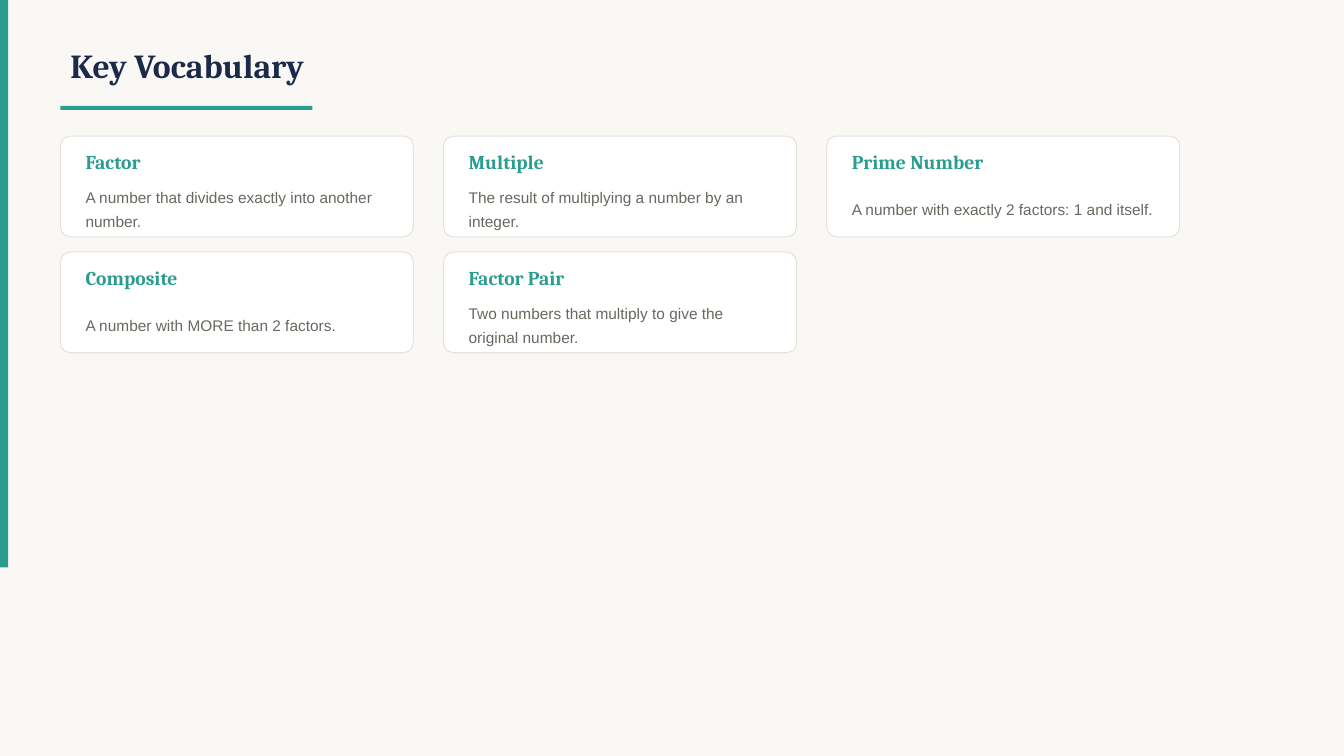
from pptx import Presentation
from pptx.dml.color import RGBColor
from pptx.enum.shapes import MSO_SHAPE
from pptx.enum.text import MSO_ANCHOR
from pptx.util import Emu, Pt

EMU_PER_PX = 9144
SLIDE_WIDTH, SLIDE_HEIGHT = 1333, 750

CREAM = RGBColor(0xFA, 0xF8, 0xF5)
TEAL = RGBColor(0x2A, 0x9D, 0x8F)
NAVY = RGBColor(0x1B, 0x2A, 0x4A)
WHITE = RGBColor(0xFF, 0xFF, 0xFF)
BORDER = RGBColor(0xE5, 0xE2, 0xDC)
GREY = RGBColor(0x6B, 0x66, 0x60)

MARGIN, CARDS_TOP = 60, 135
CARD_WIDTH, CARD_HEIGHT = 350, 100
COLUMN_GAP, ROW_GAP = 30, 15
COLUMNS = 3

VOCABULARY = [
    ("Factor", "A number that divides exactly into another number."),
    ("Multiple", "The result of multiplying a number by an integer."),
    ("Prime Number", "A number with exactly 2 factors: 1 and itself."),
    ("Composite", "A number with MORE than 2 factors."),
    ("Factor Pair", "Two numbers that multiply to give the original number."),
]


def px(*lengths):
    return [Emu(length * EMU_PER_PX) for length in lengths]


class VocabularySlide:
    """Draws vocabulary elements in one style on the current slide."""

    heading_font = "Cambria"
    body_font = "Arial"

    def __init__(self, slide):
        self.slide = slide
        background = slide.background.fill
        background.solid()
        background.fore_color.rgb = CREAM

    def panel(self, left, top, width, height, fill, line=None, radius=None):
        preset = MSO_SHAPE.RECTANGLE if radius is None else MSO_SHAPE.ROUNDED_RECTANGLE
        shape = self.slide.shapes.add_shape(preset, *px(left, top, width, height))
        shape.shadow.inherit = False
        shape.fill.solid()
        shape.fill.fore_color.rgb = fill
        if radius is not None:
            shape.adjustments[0] = radius
        if line is None:
            shape.line.fill.background()
        else:
            shape.line.color.rgb = line
            shape.line.width = Pt(0.75)

    def text(self, text, left, top, width, height, *, size, color, font,
             bold=False, line_spacing=None):
        box = self.slide.shapes.add_textbox(*px(left, top, width, height))
        frame = box.text_frame
        frame.word_wrap = True
        frame.vertical_anchor = MSO_ANCHOR.MIDDLE
        paragraph = frame.paragraphs[0]
        paragraph.line_spacing = line_spacing
        run = paragraph.add_run()
        run.text = text
        run.font.name = font
        run.font.size = Pt(size)
        run.font.bold = bold
        run.font.color.rgb = color

    def title(self, text):
        self.panel(0, 0, 8, 563, TEAL)
        self.text(text, MARGIN, 30, 1000, 70, size=24, color=NAVY,
                  font=self.heading_font, bold=True)
        self.panel(MARGIN, 105, 250, 4, TEAL)

    def card(self, left, top, term, definition):
        self.panel(left, top, CARD_WIDTH, CARD_HEIGHT, WHITE, line=BORDER, radius=0.1)
        text_left, text_width = left + 15, CARD_WIDTH - 30
        self.text(term, text_left, top + 8, text_width, 35, size=14, color=TEAL,
                  font=self.heading_font, bold=True)
        self.text(definition, text_left, top + 45, text_width, 50, size=11, color=GREY,
                  font=self.body_font, line_spacing=1.3)


def main():
    presentation = Presentation()
    presentation.slide_width, presentation.slide_height = px(SLIDE_WIDTH, SLIDE_HEIGHT)
    blank_layout = presentation.slide_layouts[6]
    vocabulary_slide = VocabularySlide(presentation.slides.add_slide(blank_layout))
    vocabulary_slide.title("Key Vocabulary")
    for index, (term, definition) in enumerate(VOCABULARY):
        row, column = divmod(index, COLUMNS)
        left = MARGIN + column * (CARD_WIDTH + COLUMN_GAP)
        top = CARDS_TOP + row * (CARD_HEIGHT + ROW_GAP)
        vocabulary_slide.card(left, top, term, definition)
    presentation.save("out.pptx")


if __name__ == "__main__":
    main()
